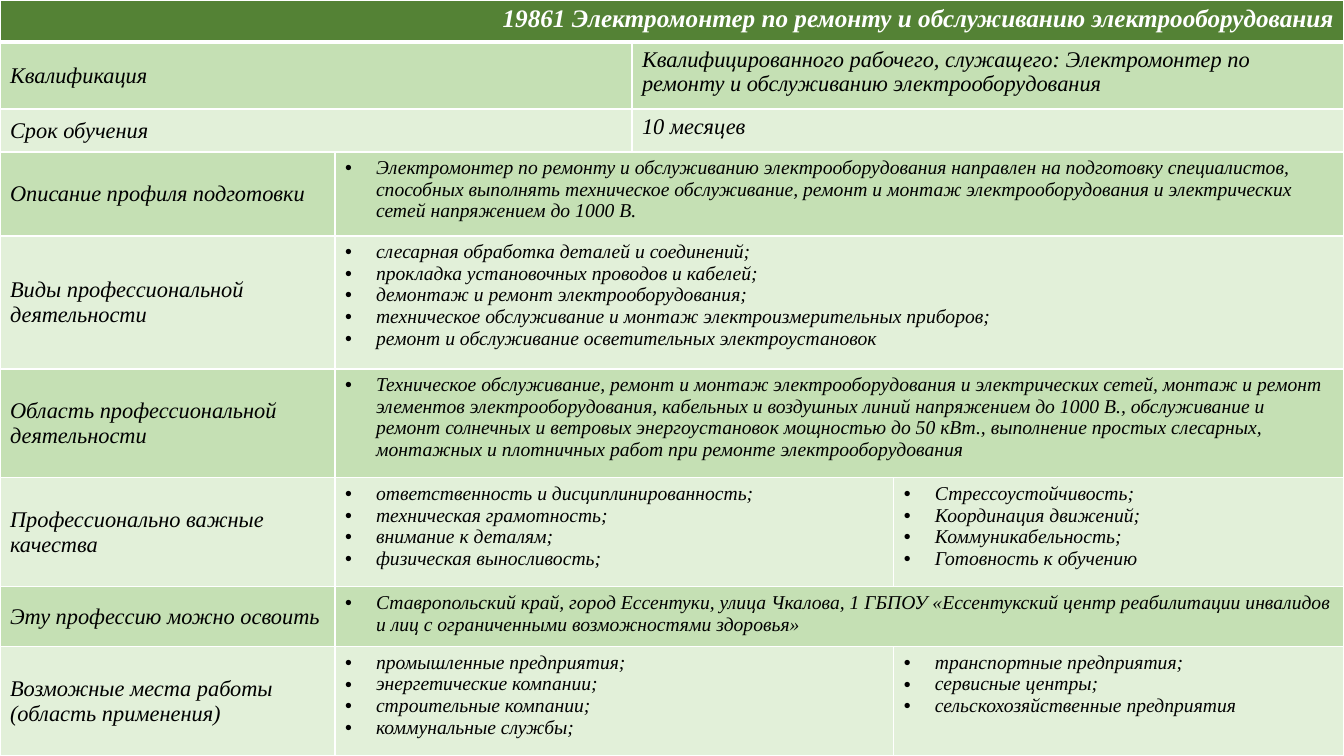
from dataclasses import dataclass

from lxml.etree import SubElement
from pptx import Presentation
from pptx.dml.color import RGBColor
from pptx.enum.text import MSO_ANCHOR, PP_ALIGN
from pptx.oxml.ns import qn
from pptx.util import Pt

PX = 914400 / 100.8  # EMU in one px


@dataclass(frozen=True)
class Theme:
    font: str = "Times New Roman"
    header_fill: str = "548235"
    bands: tuple = ("C5E0B4", "E2F0D9")
    light: str = "FFFFFF"
    dark: str = "000000"
    title_size: int = 18
    label_size: int = 16
    list_size: int = 14
    border: int = 1
    header_border: int = 3
    bullet_indent: int = 31  # px


THEME = Theme()
SLIDE_BOX = (0, 0, 1344, 756)
COLUMN_WIDTHS = (335, 297, 262, 450)
HEADER_HEIGHT = 42
TITLE = "19861 Электромонтер по ремонту и обслуживанию электрооборудования"

# Each row: height, label, columns where the cells after the label start, their paragraphs
FACTS = [
    (67, "Квалификация", [(2, [
        "Квалифицированного рабочего, служащего: Электромонтер по ремонту и "
        "обслуживанию электрооборудования"])]),
    (43, "Срок обучения", [(2, ["10 месяцев"])]),
]
DETAILS = [
    (84, "Описание профиля подготовки", [(1, [
        "Электромонтер по ремонту и обслуживанию электрооборудования направлен на "
        "подготовку специалистов, способных выполнять техническое обслуживание, ремонт "
        "и монтаж электрооборудования и электрических сетей напряжением до 1000 В."])]),
    (133, "Виды профессиональной деятельности", [(1, [
        "слесарная обработка деталей и соединений;",
        "прокладка установочных проводов и кабелей;",
        "демонтаж и ремонт электрооборудования;",
        "техническое обслуживание и монтаж электроизмерительных приборов;",
        "ремонт и обслуживание осветительных электроустановок"])]),
    (109, "Область профессиональной деятельности", [(1, [
        "Техническое обслуживание, ремонт и монтаж электрооборудования и электрических "
        "сетей, монтаж и ремонт элементов электрооборудования, кабельных и воздушных "
        "линий напряжением до 1000 В., обслуживание и ремонт солнечных и ветровых "
        "энергоустановок мощностью до 50 кВт., выполнение простых слесарных, монтажных "
        "и плотничных работ при ремонте электрооборудования"])]),
    (109, "Профессионально важные качества", [
        (1, ["ответственность и дисциплинированность;", "техническая грамотность;",
             "внимание к деталям;", "физическая выносливость;"]),
        (3, ["Стрессоустойчивость;", "Координация движений;",
             "Коммуникабельность;", "Готовность к обучению"])]),
    (60, "Эту профессию можно освоить", [(1, [
        "Ставропольский край, город Ессентуки, улица Чкалова, 1 ГБПОУ «Ессентукский "
        "центр реабилитации инвалидов и лиц с ограниченными возможностями здоровья»"])]),
    (109, "Возможные места работы (область применения)", [
        (1, ["промышленные предприятия;", "энергетические компании;",
             "строительные компании;", "коммунальные службы;"]),
        (3, ["транспортные предприятия;", "сервисные центры;",
             "сельскохозяйственные предприятия"])]),
]


def px(length):
    return round(length * PX)


def style_cell(cell, row_index):
    """Borders and fill that follow from the row the cell is in."""
    widths = dict.fromkeys(("lnL", "lnR", "lnT", "lnB"), THEME.border)
    if row_index == 0:
        widths["lnB"] = THEME.header_border
    elif row_index == 1:
        widths["lnT"] = THEME.header_border
    properties = cell._tc.get_or_add_tcPr()
    for side, width in widths.items():
        line = SubElement(properties, qn(f"a:{side}"), w=str(Pt(width)))
        fill = SubElement(line, qn("a:solidFill"))
        SubElement(fill, qn("a:srgbClr"), val=THEME.light)
    color = THEME.bands[(row_index - 1) % 2] if row_index else THEME.header_fill
    cell.fill.solid()
    cell.fill.fore_color.rgb = RGBColor.from_string(color)


def add_bullet(paragraph):
    properties = paragraph._p.get_or_add_pPr()
    indent = px(THEME.bullet_indent)
    for name, value in {"marL": indent, "indent": -indent}.items():
        properties.set(name, str(value))
    SubElement(properties, qn("a:buFont"), typeface="Arial")
    SubElement(properties, qn("a:buChar"), char="•")


def write_cell(cell, lines, size, color=THEME.dark, bold=False, bullets=False,
               align=PP_ALIGN.LEFT, anchor=MSO_ANCHOR.TOP):
    cell.vertical_anchor = anchor
    frame = cell.text_frame
    font_format = {"name": THEME.font, "size": Pt(size), "bold": bold, "italic": True}
    for index, line in enumerate(lines):
        paragraph = frame.add_paragraph() if index else frame.paragraphs[0]
        paragraph.alignment = align
        if bullets:
            add_bullet(paragraph)
        run = paragraph.add_run()
        run.text = line
        for name, value in font_format.items():
            setattr(run.font, name, value)
        run.font.color.rgb = RGBColor.from_string(color)


def write_row(table, row_index, label, groups, bullets):
    """A label cell, then one cell from each start column to the next start."""
    starts = [0] + [start for start, _ in groups]
    ends = starts[1:] + [len(COLUMN_WIDTHS)]
    for start, end in zip(starts, ends):
        if end - start > 1:
            table.cell(row_index, start).merge(table.cell(row_index, end - 1))
    write_cell(table.cell(row_index, 0), [label], THEME.label_size,
               anchor=MSO_ANCHOR.MIDDLE)
    size = THEME.list_size if bullets else THEME.label_size
    for start, lines in groups:
        write_cell(table.cell(row_index, start), lines, size, bullets=bullets)


def add_profile_table(slide, box):
    rows = FACTS + DETAILS
    heights = [HEADER_HEIGHT] + [height for height, _, _ in rows]
    table = slide.shapes.add_table(
        len(heights), len(COLUMN_WIDTHS), *map(px, box)).table
    for column, width in zip(table.columns, COLUMN_WIDTHS):
        column.width = px(width)
    for row_index, (row, height) in enumerate(zip(table.rows, heights)):
        row.height = px(height)
        for cell in row.cells:
            style_cell(cell, row_index)

    # Header across all columns
    table.cell(0, 0).merge(table.cell(0, len(COLUMN_WIDTHS) - 1))
    write_cell(table.cell(0, 0), [TITLE], THEME.title_size, color=THEME.light,
               bold=True, align=PP_ALIGN.RIGHT)

    # Plain facts first, bulleted details below
    for row_index, (_, label, groups) in enumerate(rows, start=1):
        write_row(table, row_index, label, groups, bullets=row_index > len(FACTS))


def main():
    presentation = Presentation()
    presentation.slide_width, presentation.slide_height = map(px, SLIDE_BOX[2:])
    slide = presentation.slides.add_slide(presentation.slide_layouts[6])
    add_profile_table(slide, SLIDE_BOX)
    presentation.save("out.pptx")


if __name__ == "__main__":
    main()
